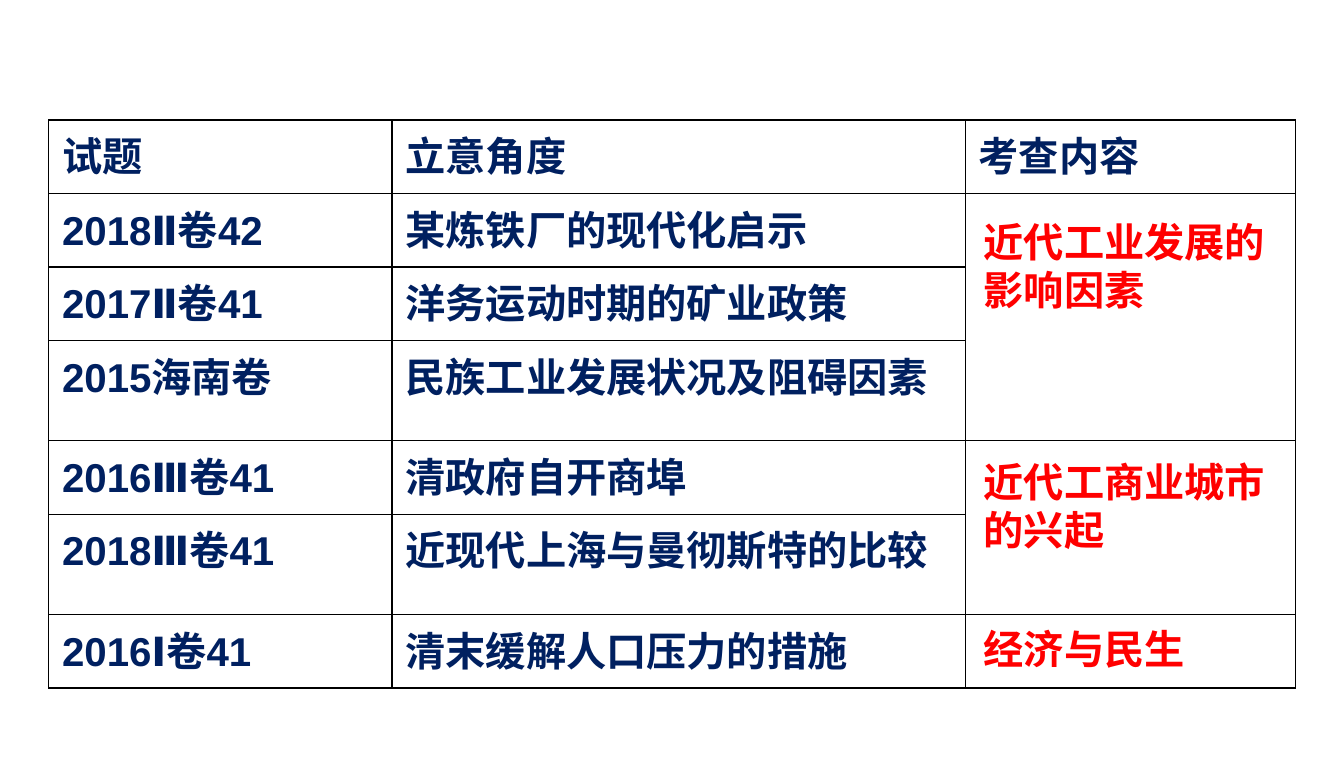
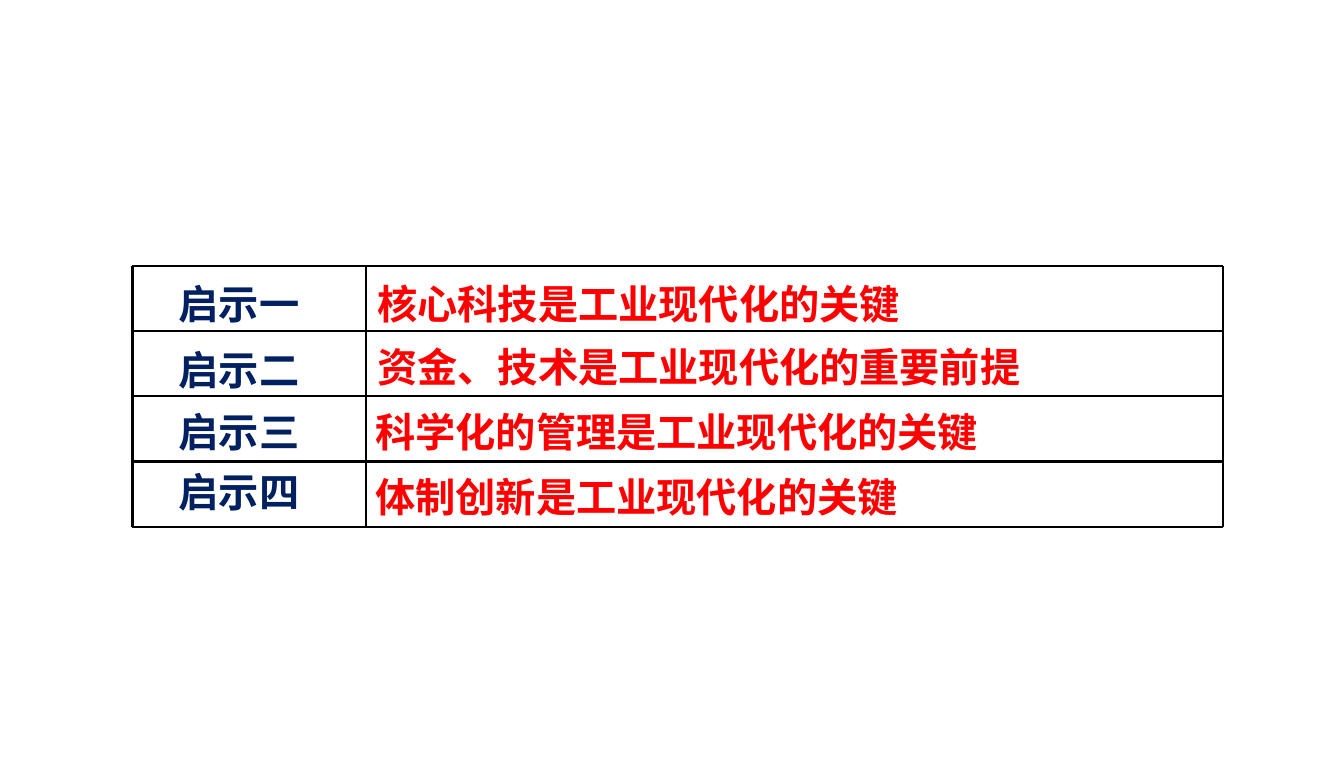
from dataclasses import dataclass
from lxml.etree import SubElement
from pptx import Presentation
from pptx.dml.color import RGBColor
from pptx.enum.shapes import MSO_CONNECTOR
from pptx.enum.text import MSO_ANCHOR, PP_ALIGN
from pptx.oxml import parse_xml
from pptx.oxml.ns import nsdecls, qn
from pptx.util import Inches, Pt


@dataclass(frozen=True)
class Theme:
    navy: RGBColor = RGBColor(0x00, 0x20, 0x60)
    red: RGBColor = RGBColor(0xFF, 0x00, 0x00)
    rule: RGBColor = RGBColor(0x00, 0x00, 0x00)
    size: Pt = Pt(28)
    cell: Pt = Pt(1)
    line: Pt = Pt(1.5)
    latin: str = "Arial"
    asian: str = "Noto Sans CJK SC"


THEME = Theme()

# Slide 1: exam questions, and the topics laid over the last column
EXAMS = [
    ("试题", "立意角度", "考查内容"),
    ("2018Ⅱ卷42", "某炼铁厂的现代化启示", ""),
    ("2017Ⅱ卷41", "洋务运动时期的矿业政策", ""),
    ("2015海南卷", "民族工业发展状况及阻碍因素", ""),
    ("2016Ⅲ卷41", "清政府自开商埠", ""),
    ("2018Ⅲ卷41", "近现代上海与曼彻斯特的比较", ""),
    ("2016Ⅰ卷41", "清末缓解人口压力的措施", ""),
]
COLS = (3.32, 5.54, 3.19)
ROW, TALL = 0.71, 0.97
TALL_ROWS = (3, 5)
MERGES = ((1, 3), (4, 5))
TOPICS = [
    ("近代工业发展的影响因素", (9.41, 2.05, 3.12, 1.04), True),
    ("近代工商业城市的兴起", (9.41, 4.37, 3.12, 1.04), True),
    ("经济与民生", (9.41, 5.98, 2.15, 0.57), False),
]

# Slide 2: label, its top, lesson, its left and top
LESSONS = [
    ("启示一", 2.57, "核心科技是工业现代化的关键", 3.55, 2.57),
    ("启示二", 3.2, "资金、技术是工业现代化的重要前提", 3.55, 3.17),
    ("启示三", 3.8, "科学化的管理是工业现代化的关键", 3.53, 3.8),
    ("启示四", 4.38, "体制创新是工业现代化的关键", 3.53, 4.43),
]
EDGES = (1.28, 3.54, 11.82)
TOP, STEP = 2.57, 0.63


def style(para, color, latin):
    font = para.font
    font.size, font.bold, font.name = THEME.size, True, latin
    font.color.rgb = color
    props = para._p.pPr.find(qn("a:defRPr"))
    SubElement(props, qn("a:ea")).set("typeface", THEME.asian)


def add_text(slide, text, box, color, latin, wrap=True):
    frame = slide.shapes.add_textbox(*map(Inches, box)).text_frame
    frame.word_wrap = wrap
    frame.text = text
    style(frame.paragraphs[0], color, latin)
    return frame


def add_border(cell):
    cell.fill.background()
    props = cell._tc.get_or_add_tcPr()
    for spot, side in enumerate("LRTB"):
        props.insert(spot, parse_xml(
            f'<a:ln{side} {nsdecls("a")} w="{THEME.cell}"><a:solidFill>'
            f'<a:srgbClr val="{THEME.rule}"/></a:solidFill></a:ln{side}>'))


def add_line(group, start, end):
    line = group.shapes.add_connector(
        MSO_CONNECTOR.STRAIGHT, *map(Inches, start + end))
    line.line.color.rgb = THEME.rule
    line.line.width = THEME.line
    SubElement(line._element.spPr, qn("a:effectLst"))


def build_exams(slide):
    # Table with its column widths and row heights
    rows = [TALL if i in TALL_ROWS else ROW for i in range(len(EXAMS))]
    box = map(Inches, (0.47, 1.16, sum(COLS), sum(rows)))
    table = slide.shapes.add_table(len(rows), len(COLS), *box).table
    table.first_row = table.horz_banding = False
    for col, width in zip(table.columns, COLS):
        col.width = Inches(width)
    for row, height, texts in zip(table.rows, rows, EXAMS):
        row.height = Inches(height)
        for cell, text in zip(row.cells, texts):
            cell.margin_left = cell.margin_right = Inches(0.13)
            cell.text = text
            style(cell.text_frame.paragraphs[0], THEME.navy, THEME.latin)
            add_border(cell)
    for first, last in MERGES:
        table.cell(first, 2).merge(table.cell(last, 2))

    # Topics
    for text, box, wrap in TOPICS:
        add_text(slide, text, box, THEME.red, THEME.latin, wrap)


def build_lessons(slide):
    # Ruled grid
    group = slide.shapes.add_group_shape()
    levels = [TOP + STEP * i for i in range(len(LESSONS) + 1)]
    for y in levels:
        add_line(group, (EDGES[0], y), (EDGES[-1], y))
    for x in EDGES:
        add_line(group, (x, levels[0]), (x, levels[-1]))

    # Labels and lessons
    for label, y, lesson, left, top in LESSONS:
        for text, box, color, align in (
            (label, (EDGES[0], y, 2.06, 0.5), THEME.navy, PP_ALIGN.CENTER),
            (lesson, (left, top, 8.2, 0.5), THEME.red, PP_ALIGN.LEFT),
        ):
            frame = add_text(slide, text, box, color, THEME.asian)
            frame.vertical_anchor = MSO_ANCHOR.MIDDLE
            frame.paragraphs[0].alignment = align
            frame.paragraphs[0].line_spacing = 1.5


def main():
    deck = Presentation()
    deck.slide_width, deck.slide_height = Inches(12.99), Inches(7.5)
    blank = deck.slide_layouts[6]
    for build in (build_exams, build_lessons):
        build(deck.slides.add_slide(blank))
    deck.save("out.pptx")


if __name__ == "__main__":
    main()
